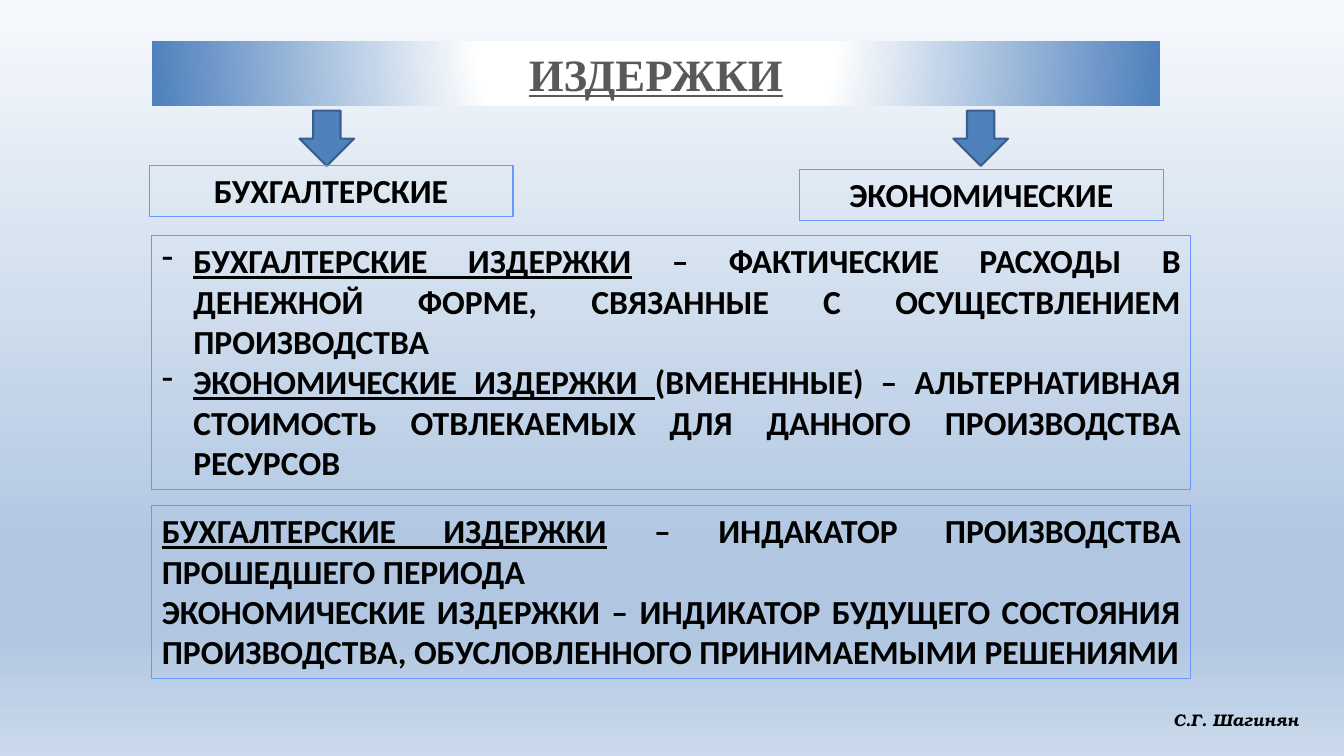
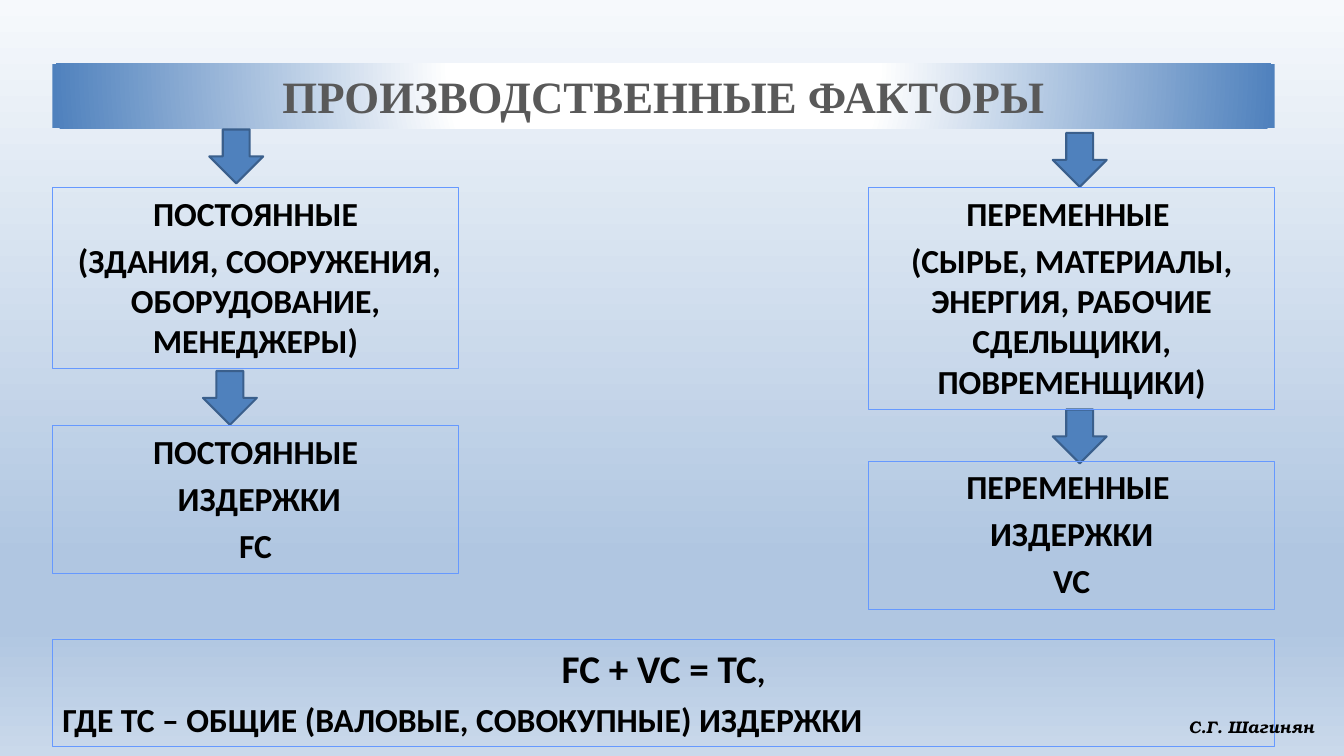
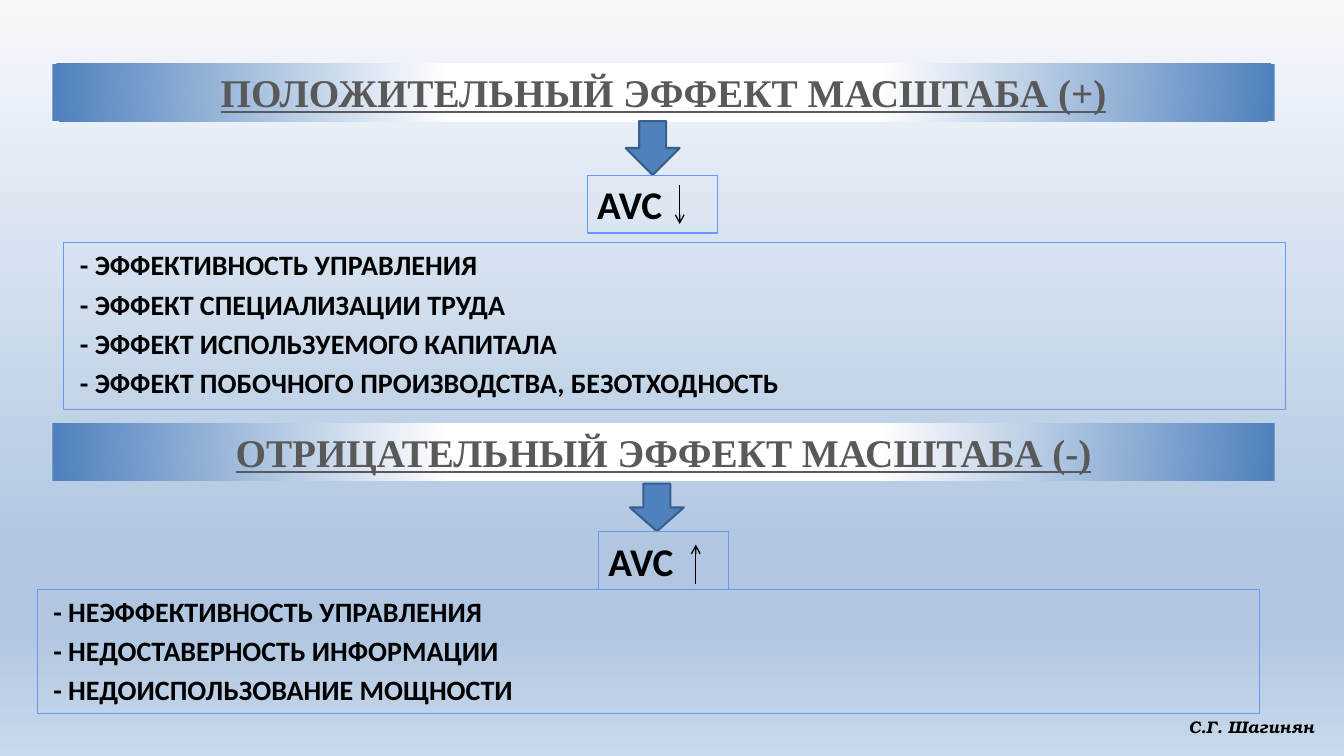
import pptx
import pptx.util
import pptx.dml.color
import pptx.enum.shapes
import pptx.enum.text
import pptx.oxml
import pptx.oxml.ns

Pt = pptx.util.Pt
RGB = pptx.dml.color.RGBColor.from_string
SHAPE = pptx.enum.shapes.MSO_SHAPE
ALIGN = pptx.enum.text.PP_ALIGN
qn = pptx.oxml.ns.qn

# Theme
CENTER, JUSTIFY, LEFT = ALIGN.CENTER, ALIGN.JUSTIFY, ALIGN.LEFT
BODY = dict(font="Calibri", size=24, color="000000", bold=True)
HEADING = dict(font="Times New Roman", size=32, color="595959", bold=True, align=CENTER)
THEME = {
    "background": [(0, "F6F9FC"), (74, "B0C6E1"), (83, "B0C6E1"), (100, "CAD9EB")],
    "band": [(0, "FFFFFF"), (35, "FFFFFF"), (100, "4F81BD")],
    "frame": "6699FF", "arrow": "4F81BD", "arrow_edge": "3A5F8C", "line": "000000",
    "text": {
        "title": dict(HEADING, underline=True),
        "plain title": HEADING,
        "subtitle": dict(HEADING, size=28, underline=True),
        "label": dict(BODY, align=CENTER),
        "group": dict(BODY, align=CENTER, before=4.8),
        "note": dict(BODY, align=JUSTIFY),
        "spaced note": dict(BODY, align=JUSTIFY, before=4.8),
        "dashed": dict(BODY, align=JUSTIFY, bullet="-", indent=22.5),
        "list": dict(BODY, size=20, align=JUSTIFY, before=4),
        "formula": dict(BODY, size=28, align=CENTER, before=5.6),
        "author": dict(BODY, font="TeX Gyre Bonum", size=12, italic=True, align=LEFT),
    },
}
AUTHOR = "С.Г. Шагинян"
UNDERLINED = dict(underline=True)

# Content: rectangles are left, top, width, height in points
LEFT_X, RIGHT_X, COLUMN_W, WIDE = 37.5, 620.5, 290, 873
SLIDES = [
    {
        "author": (831, 503.3),
        "bands": [((108.5, 29.5, 720, 46), "title", "ИЗДЕРЖКИ")],
        "arrows": [(214, 79, 39, 39.5), (681, 79, 39, 39.5)],
        "boxes": [
            ((106.5, 118, 260, 36.5), "label", ["БУХГАЛТЕРСКИЕ"]),
            ((571, 121, 260, 36.5), "label", ["ЭКОНОМИЧЕСКИЕ"]),
            ((108.5, 168, 742, 181.5), "dashed", [
                [("БУХГАЛТЕРСКИЕ ИЗДЕРЖКИ", UNDERLINED),
                 " – ФАКТИЧЕСКИЕ РАСХОДЫ В ДЕНЕЖНОЙ ФОРМЕ, "
                 "СВЯЗАННЫЕ С ОСУЩЕСТВЛЕНИЕМ ПРОИЗВОДСТВА"],
                [("ЭКОНОМИЧЕСКИЕ ИЗДЕРЖКИ ", UNDERLINED),
                 "(ВМЕНЕННЫЕ) – АЛЬТЕРНАТИВНАЯ СТОИМОСТЬ ОТВЛЕКАЕМЫХ "
                 "ДЛЯ ДАННОГО ПРОИЗВОДСТВА РЕСУРСОВ"]]),
            ((108.5, 361, 742, 124), "note", [
                [("БУХГАЛТЕРСКИЕ ИЗДЕРЖКИ", UNDERLINED),
                 " – ИНДАКАТОР ПРОИЗВОДСТВА ПРОШЕДШЕГО ПЕРИОДА"],
                "ЭКОНОМИЧЕСКИЕ ИЗДЕРЖКИ – ИНДИКАТОР БУДУЩЕГО СОСТОЯНИЯ "
                "ПРОИЗВОДСТВА, ОБУСЛОВЛЕННОГО ПРИНИМАЕМЫМИ РЕШЕНИЯМИ"]),
        ],
    },
    {
        "author": (842, 508.3),
        "bands": [((LEFT_X, 45.5, WIDE, 46), "plain title", "ПРОИЗВОДСТВЕННЫЕ ФАКТОРЫ")],
        "arrows": [(149.5, 92.5, 38.5, 38.5), (752, 95, 38.5, 38.5),
                   (145, 265, 38.5, 38.5), (752, 292.5, 38.5, 38.5)],
        "boxes": [
            ((LEFT_X, 134, COLUMN_W, 129.5), "group",
             ["ПОСТОЯННЫЕ", " (ЗДАНИЯ, СООРУЖЕНИЯ, ОБОРУДОВАНИЕ, МЕНЕДЖЕРЫ)"]),
            ((RIGHT_X, 134, COLUMN_W, 158.5), "group",
             ["ПЕРЕМЕННЫЕ ", "(СЫРЬЕ, МАТЕРИАЛЫ, ЭНЕРГИЯ, РАБОЧИЕ СДЕЛЬЩИКИ, ПОВРЕМЕНЩИКИ)"]),
            ((LEFT_X, 304, COLUMN_W, 106), "group", ["ПОСТОЯННЫЕ", " ИЗДЕРЖКИ", "FC"]),
            ((RIGHT_X, 329.5, COLUMN_W, 106), "group", ["ПЕРЕМЕННЫЕ ", "ИЗДЕРЖКИ", "VC"]),
            ((LEFT_X, 457, WIDE, 76), ["formula", "spaced note"], [
                ["FC + VC = TC", (",", dict(size=24))],
                "ГДЕ ТС – ОБЩИЕ (ВАЛОВЫЕ, СОВОКУПНЫЕ) ИЗДЕРЖКИ"]),
        ],
    },
    {
        "author": (842, 508.3),
        "bands": [
            ((LEFT_X, 45.5, WIDE, 41), "subtitle", "ПОЛОЖИТЕЛЬНЫЙ ЭФФЕКТ МАСШТАБА (+)"),
            ((LEFT_X, 302.5, WIDE, 41), "subtitle", "ОТРИЦАТЕЛЬНЫЙ ЭФФЕКТ МАСШТАБА (-)"),
        ],
        "arrows": [(447, 86.5, 38.5, 38.5), (450, 345.5, 38.5, 34)],
        "boxes": [
            ((419.5, 125.5, 93, 41), "formula", ["AVC"]),
            ((45.5, 173.5, WIDE, 119), "list", [
                " - ЭФФЕКТИВНОСТЬ УПРАВЛЕНИЯ",
                " - ЭФФЕКТ СПЕЦИАЛИЗАЦИИ ТРУДА",
                " - ЭФФЕКТ ИСПОЛЬЗУЕМОГО КАПИТАЛА",
                " - ЭФФЕКТ ПОБОЧНОГО ПРОИЗВОДСТВА, БЕЗОТХОДНОСТЬ"]),
            ((427.5, 380, 93, 41), "formula", ["AVC"]),
            ((26.5, 421, WIDE, 89), "list", [
                " - НЕЭФФЕКТИВНОСТЬ УПРАВЛЕНИЯ",
                " - НЕДОСТАВЕРНОСТЬ ИНФОРМАЦИИ",
                " - НЕДОИСПОЛЬЗОВАНИЕ МОЩНОСТИ"]),
        ],
        "trends": [(485.5, 132, 160), (497, 417.5, 389)],
    },
]
THEME["text"]["symbol"] = dict(THEME["text"]["formula"], align=JUSTIFY)
for box in SLIDES[2]["boxes"]:
    if box[2] == ["AVC"]:
        SLIDES[2]["boxes"][SLIDES[2]["boxes"].index(box)] = (box[0], "symbol", box[2])


# Drawing helpers
def set_gradient(element, stops, direction):
    """Replace the gradient already present in element."""
    old = element.find(".//" + qn("a:gradFill"))
    marks = "".join(f'<a:gs pos="{pos * 1000}"><a:srgbClr val="{color}"/></a:gs>'
                    for pos, color in stops)
    new = pptx.oxml.parse_xml(
        f'<a:gradFill {pptx.oxml.ns.nsdecls("a")} rotWithShape="1">'
        f"<a:gsLst>{marks}</a:gsLst>{direction}</a:gradFill>")
    old.getparent().replace(old, new)


def write(tf, text, font, size, color, align, bold=False, italic=False,
          underline=False, before=0, bullet=None, indent=0):
    """Add one paragraph; text is a string or a list of runs."""
    p = tf.paragraphs[0] if not tf.paragraphs[0].runs else tf.add_paragraph()
    p.alignment, p.space_before = align, Pt(before)
    if bullet:
        pPr = p._p.get_or_add_pPr()
        pPr.set("marL", str(Pt(indent)))
        pPr.set("indent", str(-Pt(indent)))
        pPr.append(pptx.oxml.parse_xml(
            f'<a:buChar {pptx.oxml.ns.nsdecls("a")} char="{bullet}"/>'))
    for run in [text] if isinstance(text, str) else text:
        words, change = (run, {}) if isinstance(run, str) else run
        r = p.add_run()
        r.text = words
        r.font.name, r.font.bold, r.font.italic = font, bold, italic
        r.font.size = Pt(change.get("size", size))
        r.font.underline = change.get("underline", underline)
        r.font.color.rgb = RGB(color)


def add_shape(s, kind, rect):
    sp = s.shapes.add_shape(kind, *map(Pt, rect))
    sp.shadow.inherit = False
    return sp


def fill_text(sp, styles, paragraphs, wrap=True):
    tf = sp.text_frame
    tf.word_wrap = wrap
    tf.vertical_anchor = pptx.enum.text.MSO_ANCHOR.TOP
    tf.auto_size = pptx.enum.text.MSO_AUTO_SIZE.SHAPE_TO_FIT_TEXT
    if isinstance(styles, str):
        styles = [styles] * len(paragraphs)
    for style, text in zip(styles, paragraphs):
        write(tf, text, **THEME["text"][style])


def add_band(s, rect, style, title):
    sp = add_shape(s, SHAPE.RECTANGLE, rect)
    sp.fill.gradient()
    set_gradient(sp._element, THEME["band"],
                 '<a:path path="circle"><a:fillToRect l="50000" t="-80000" '
                 'r="50000" b="180000"/></a:path>')
    sp.line.fill.background()
    fill_text(sp, style, [title])


def add_box(s, rect, style, paragraphs):
    sp = add_shape(s, SHAPE.RECTANGLE, rect)
    sp.fill.background()
    sp.line.color.rgb, sp.line.width = RGB(THEME["frame"]), Pt(0.75)
    fill_text(sp, style, paragraphs)


def add_arrow(s, rect):
    sp = add_shape(s, SHAPE.DOWN_ARROW, rect)
    sp.fill.solid()
    sp.fill.fore_color.rgb = RGB(THEME["arrow"])
    sp.line.color.rgb, sp.line.width = RGB(THEME["arrow_edge"]), Pt(1.5)


def add_trend(s, x, start, end):
    line = s.shapes.add_connector(pptx.enum.shapes.MSO_CONNECTOR.STRAIGHT,
                                  Pt(x), Pt(start), Pt(x), Pt(end))
    line.line.color.rgb, line.line.width = RGB(THEME["line"]), Pt(0.94)
    ns = pptx.oxml.ns.nsdecls("a")
    line.line._get_or_add_ln().append(pptx.oxml.parse_xml(f'<a:tailEnd {ns} type="arrow"/>'))
    line._element.spPr.append(pptx.oxml.parse_xml(f"<a:effectLst {ns}/>"))


def main():
    prs = pptx.Presentation()
    prs.slide_width, prs.slide_height = Pt(960), Pt(540)

    # Shared background
    prs.slide_master.background.fill.gradient()
    set_gradient(prs.slide_master._element, THEME["background"],
                 '<a:lin ang="5400000" scaled="0"/>')

    # Slides
    for content in SLIDES:
        s = prs.slides.add_slide(prs.slide_layouts[6])
        for band in content["bands"]:
            add_band(s, *band)
        for rect in content["arrows"]:
            add_arrow(s, rect)
        for box in content["boxes"]:
            add_box(s, *box)
        for trend in content.get("trends", []):
            add_trend(s, *trend)
        author = s.shapes.add_textbox(*map(Pt, (*content["author"], 104, 21.8)))
        fill_text(author, "author", [AUTHOR], wrap=False)
    prs.save("out.pptx")


if __name__ == "__main__":
    main()
